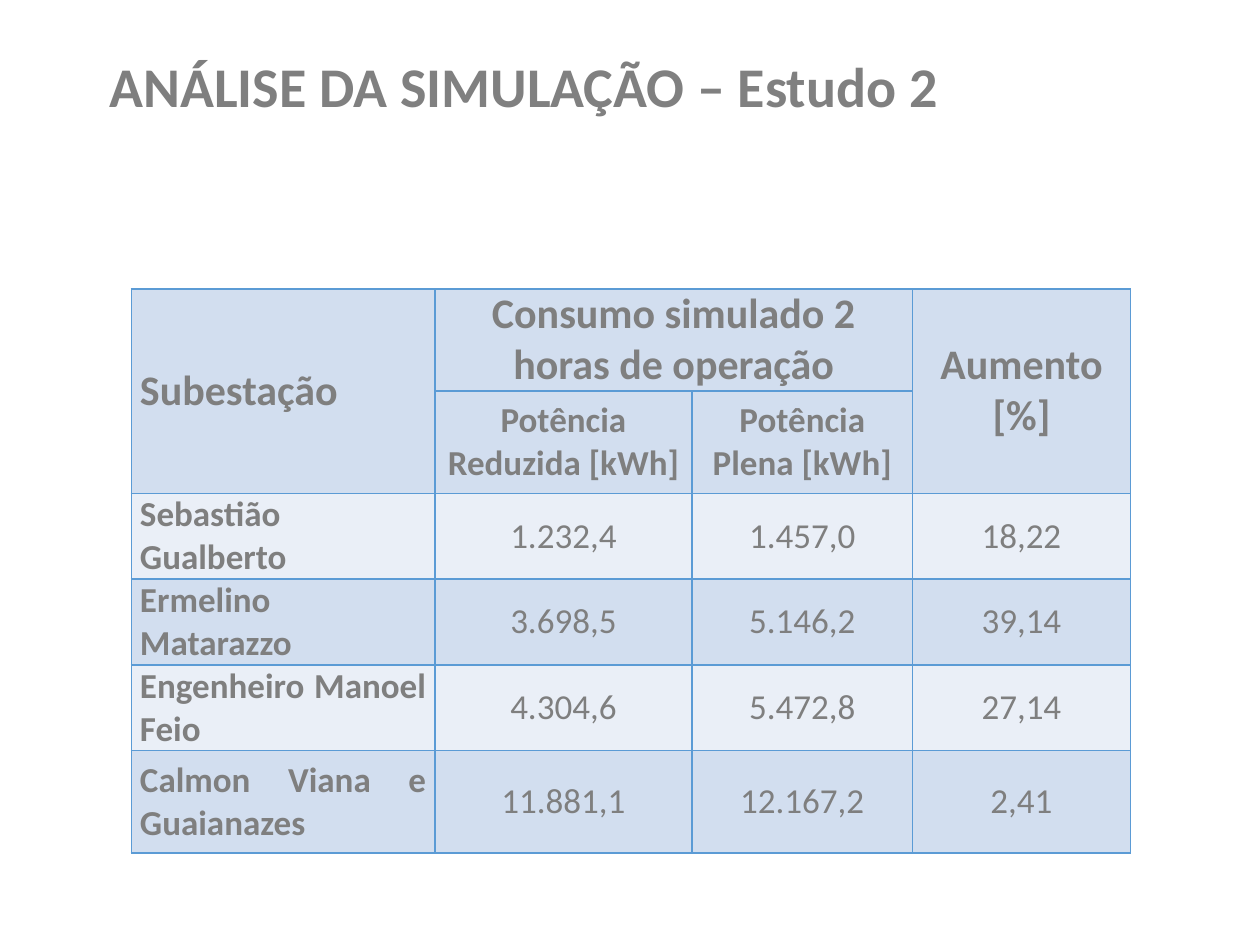
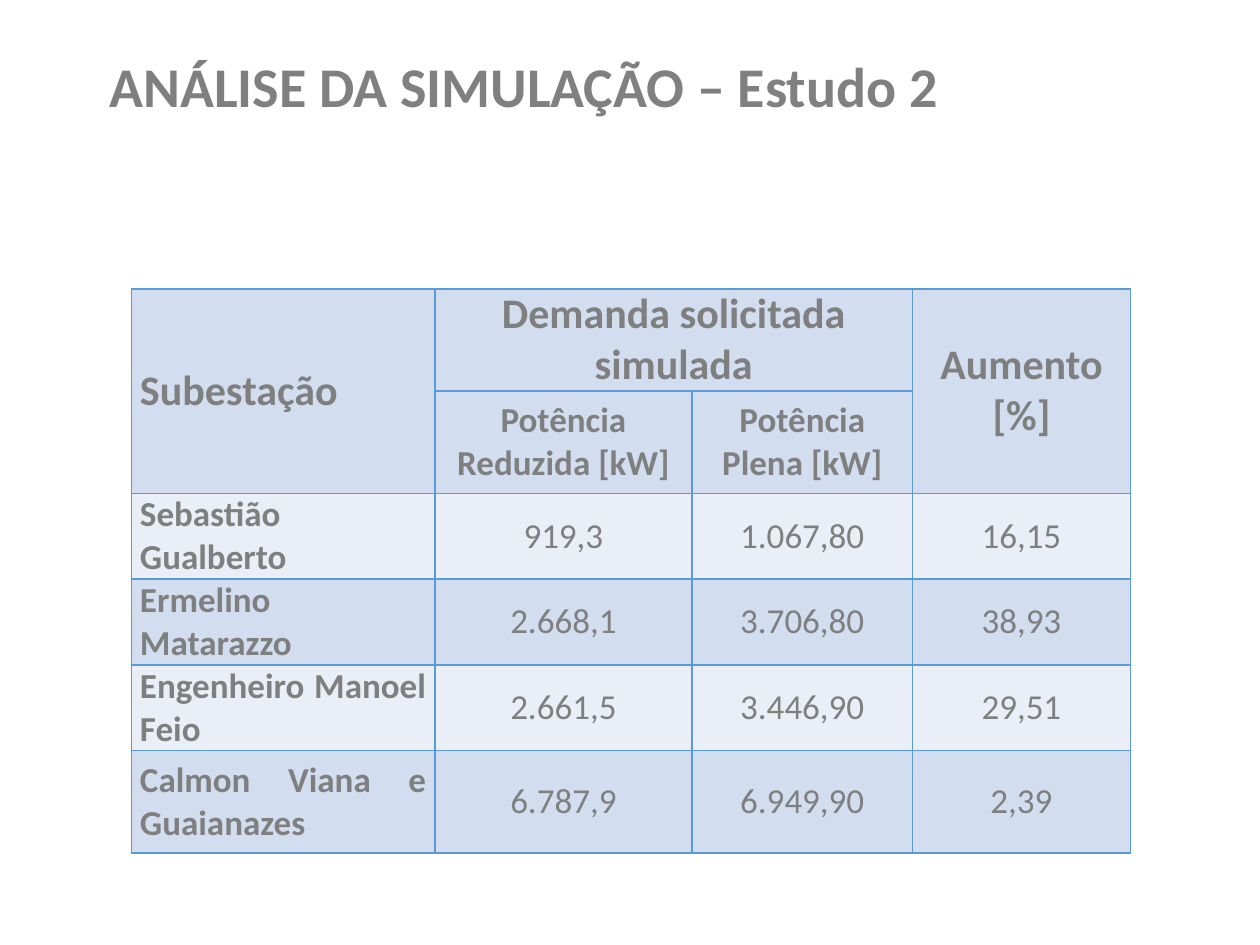
from lxml import etree
from pptx import Presentation
from pptx.dml.color import RGBColor
from pptx.enum import text
from pptx.oxml import ns
from pptx.util import Pt

GRAY, TITLE = "7F7F7F", "808080"
DARK, LIGHT, EDGE = "D2DEEF", "EAEFF7", "5B9BD5"
CENTER, JUST = text.PP_ALIGN.CENTER, text.PP_ALIGN.JUSTIFY
MIDDLE = text.MSO_ANCHOR.MIDDLE
WIDTHS = [173.5, 147, 126, 124.5]
HEIGHTS = [58.5, 58.5, 49, 49, 49, 58.5]
NAMES = ["Sebastião Gualberto", "Ermelino Matarazzo",
         "Engenheiro Manoel Feio", "Calmon Viana e Guaianazes"]
STUDIES = [
    ("Consumo simulado 2 horas de operação", "kWh", [
        ("1.232,4", "1.457,0", "18,22"),
        ("3.698,5", "5.146,2", "39,14"),
        ("4.304,6", "5.472,8", "27,14"),
        ("11.881,1", "12.167,2", "2,41")]),
    ("Demanda solicitada simulada", "kW", [
        ("919,3", "1.067,80", "16,15"),
        ("2.668,1", "3.706,80", "38,93"),
        ("2.661,5", "3.446,90", "29,51"),
        ("6.787,9", "6.949,90", "2,39")]),
]


def color(code):
    return RGBColor.from_string(code)


class Deck:
    font = "Calibri"

    def __init__(self):
        self.file = Presentation()
        self.file.slide_width, self.file.slide_height = Pt(720), Pt(540)
        self.slide = None

    def page(self):
        self.slide = self.file.slides.add_slide(self.file.slide_layouts[6])

    def run(self, para, words, size, tint=GRAY, bold=True):
        run = para.add_run()
        run.text = words
        font = run.font
        font.name, font.size, font.bold = self.font, Pt(size), bold
        font.color.rgb = color(tint)

    def title(self, first, rest):
        box = self.slide.shapes.add_textbox(Pt(55.5), Pt(28), Pt(556.5), Pt(46))
        frame = box.text_frame
        frame.word_wrap = True
        frame.vertical_anchor = MIDDLE
        para = frame.paragraphs[0]
        para.line_spacing = 0.9
        self.run(para, first, 32)
        self.run(para, rest, 32, TITLE)

    def border(self, cell):
        props = cell._tc.get_or_add_tcPr()
        for side in "LRTB":
            line = etree.SubElement(props, ns.qn(f"a:ln{side}"), w=str(Pt(1)))
            fill = etree.SubElement(line, ns.qn("a:solidFill"))
            etree.SubElement(fill, ns.qn("a:srgbClr"), val=EDGE)

    def cell(self, cell, words, size, bold, align, fill):
        self.border(cell)
        cell.fill.solid()
        cell.fill.fore_color.rgb = color(fill)
        cell.margin_left = cell.margin_right = Pt(5)
        cell.margin_top = cell.margin_bottom = 0
        cell.vertical_anchor = MIDDLE
        para = cell.text_frame.paragraphs[0]
        para.alignment = align
        if words:
            self.run(para, words, size, bold=bold)

    def table(self, rows):
        shape = self.slide.shapes.add_table(
            len(rows), len(WIDTHS), Pt(75), Pt(165),
            Pt(sum(WIDTHS)), Pt(sum(HEIGHTS)))
        grid = shape.table
        for col, width in zip(grid.columns, WIDTHS):
            col.width = Pt(width)
        for row, height in zip(grid.rows, HEIGHTS):
            row.height = Pt(height)
        for y, row in enumerate(rows):
            fill = LIGHT if y in (2, 4) else DARK
            for x, words in enumerate(row):
                self.cell(grid.cell(y, x), words, 20 if y else 24,
                          y < 2 or x == 0, CENTER if x else JUST, fill)
        for top, end in (((0, 0), (1, 0)), ((0, 1), (0, 2)), ((0, 3), (1, 3))):
            grid.cell(*top).merge(grid.cell(*end))


def main():
    deck = Deck()
    for head, unit, data in STUDIES:
        deck.page()
        deck.title("ANÁLISE", " DA SIMULAÇÃO – Estudo 2")
        rows = [("Subestação", head, "", "Aumento [%]"),
                ("", f"Potência Reduzida [{unit}]", f"Potência Plena [{unit}]", "")]
        rows += [(name, *nums) for name, nums in zip(NAMES, data)]
        deck.table(rows)
    deck.file.save("out.pptx")


if __name__ == "__main__":
    main()
